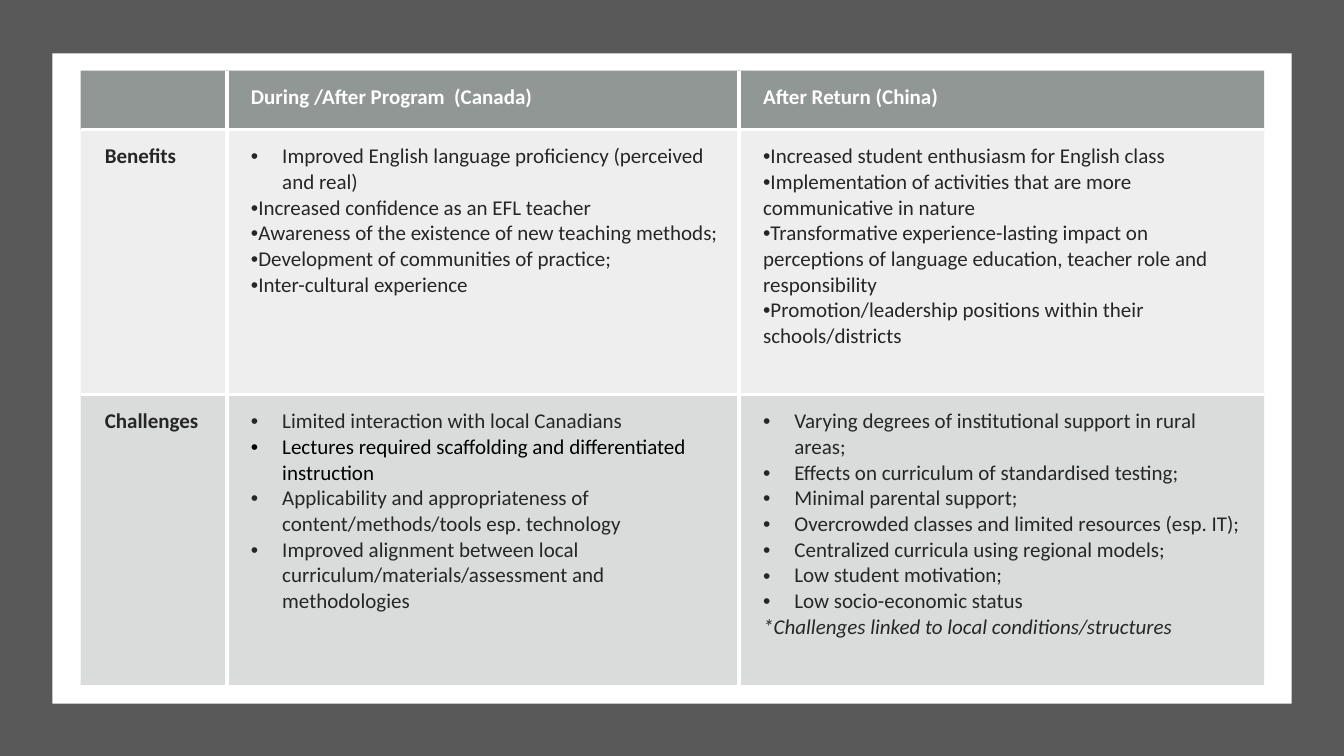
from lxml import etree
from pptx import Presentation
from pptx import util as u
from pptx.dml.color import RGBColor
from pptx.enum import shapes
from pptx.oxml import ns

deck = Presentation()
deck.slide_width, deck.slide_height = u.Inches(13.33), u.Inches(7.5)
wide, high = deck.slide_width / 100, deck.slide_height / 100
slide = deck.slides.add_slide(deck.slide_layouts[6])


def paint(fill, tone, alpha=100):
    fill.solid()
    fill.fore_color.rgb = RGBColor.from_string(tone)
    if alpha < 100:
        color = fill._xPr.find(ns.qn("a:solidFill"))[0]
        etree.SubElement(color, ns.qn("a:alpha"), val=str(alpha * 1000))


def scale(x, y, w, h):
    return int(x * wide), int(y * high), int(w * wide), int(h * high)


for box, tone in [((0, 0, 100, 100), "595959"), ((3.9, 7.07, 92.2, 86), "FFFFFF")]:
    panel = slide.shapes.add_shape(shapes.MSO_SHAPE.RECTANGLE, *scale(*box))
    panel.shadow.inherit = False
    panel.line.fill.background()
    paint(panel.fill, tone)

DARK, WHITE, BLACK = "262626", "FFFFFF", "000000"
HANG, FLAT, PLAIN = "hang", "flat", "plain"
widths = [10.88, 38.11, 39.08]
heights = [7.73, 35.07, 38.4]
fills = [("636B68", 70), ("878E8B", 15), ("878E8B", 30)]

rows = [
    [
        [],
        [("During /After Program  (Canada)", PLAIN)],
        [("After Return (China)", PLAIN)],
    ],
    [
        [("Benefits", PLAIN)],
        [
            ("Improved English language proficiency (perceived and real)", HANG),
            ("Increased confidence as an EFL teacher", FLAT),
            ("Awareness of the existence of new teaching methods;", FLAT),
            ("Development of communities of practice;", FLAT),
            ("Inter-cultural experience", FLAT),
        ],
        [
            ("Increased student enthusiasm for English class", FLAT),
            ("Implementation of activities that are more communicative in nature", FLAT),
            ("Transformative experience-lasting impact on perceptions of "
             "language education, teacher role and responsibility", FLAT),
            ("Promotion/leadership positions within their schools/districts", FLAT),
        ],
    ],
    [
        [("Challenges", PLAIN)],
        [
            ("Limited interaction with local Canadians", HANG),
            ("Lectures required scaffolding and differentiated instruction", HANG),
            ("Applicability and appropriateness of content/methods/tools "
             "esp. technology", HANG),
            ("Improved alignment between local curriculum/materials/assessment "
             "and methodologies", HANG),
        ],
        [
            ("Varying degrees of institutional support in rural areas;", HANG),
            ("Effects on curriculum of standardised testing;", HANG),
            ("Minimal parental support;", HANG),
            ("Overcrowded classes and limited resources (esp. IT);", HANG),
            ("Centralized curricula using regional models;", HANG),
            ("Low student motivation;", HANG),
            ("Low socio-economic status", HANG),
            ("*Challenges linked to local conditions/structures", PLAIN),
        ],
    ],
]

frame = slide.shapes.add_table(3, 3, *scale(6, 9.33, sum(widths), sum(heights)))
table = frame.table
table._tbl.tblPr.find(ns.qn("a:tableStyleId")).text = "{2D5ABB26-0587-4C30-8999-92F81FD0307C}"
for col, share in zip(table.columns, widths):
    col.width = int(share * wide)
for row, share in zip(table.rows, heights):
    row.height = int(share * high)

for r, row in enumerate(rows):
    for c, lines in enumerate(row):
        cell = table.cell(r, c)
        cell.margin_left = u.Inches(0.24)
        cell.margin_top = cell.margin_right = cell.margin_bottom = u.Inches(0.14)
        props = cell._tc.get_or_add_tcPr()
        inner = {"a:lnL": c > 0, "a:lnR": c < 2, "a:lnT": r > 0, "a:lnB": r < 2}
        for side, shown in inner.items():
            if shown:
                edge = etree.SubElement(props, ns.qn(side), w=str(u.Pt(3)))
                solid = etree.SubElement(edge, ns.qn("a:solidFill"))
                etree.SubElement(solid, ns.qn("a:srgbClr"), val=WHITE)
        paint(cell.fill, *fills[r])

        body = cell.text_frame
        for n, (words, kind) in enumerate(lines):
            para = body.add_paragraph() if n else body.paragraphs[0]
            if kind != PLAIN:
                para.level = 1 if r == 1 else 0
                style = para._p.get_or_add_pPr()
                style.set("marL", str(u.Inches(0.31 if kind == HANG else 0)))
                style.set("indent", str(u.Inches(-0.31)))
                etree.SubElement(style, ns.qn("a:buFont"), typeface="Arial")
                etree.SubElement(style, ns.qn("a:buChar"), char="•")
            run = para.add_run()
            run.text = words
            font = run.font
            font.name, font.size = "Calibri", u.Pt(15)
            font.bold = r == 0 or c == 0
            font.italic = words.startswith("*")
            tone = BLACK if words.startswith("Lectures") else DARK
            paint(font.fill, tone if r else WHITE)

deck.save("out.pptx")
